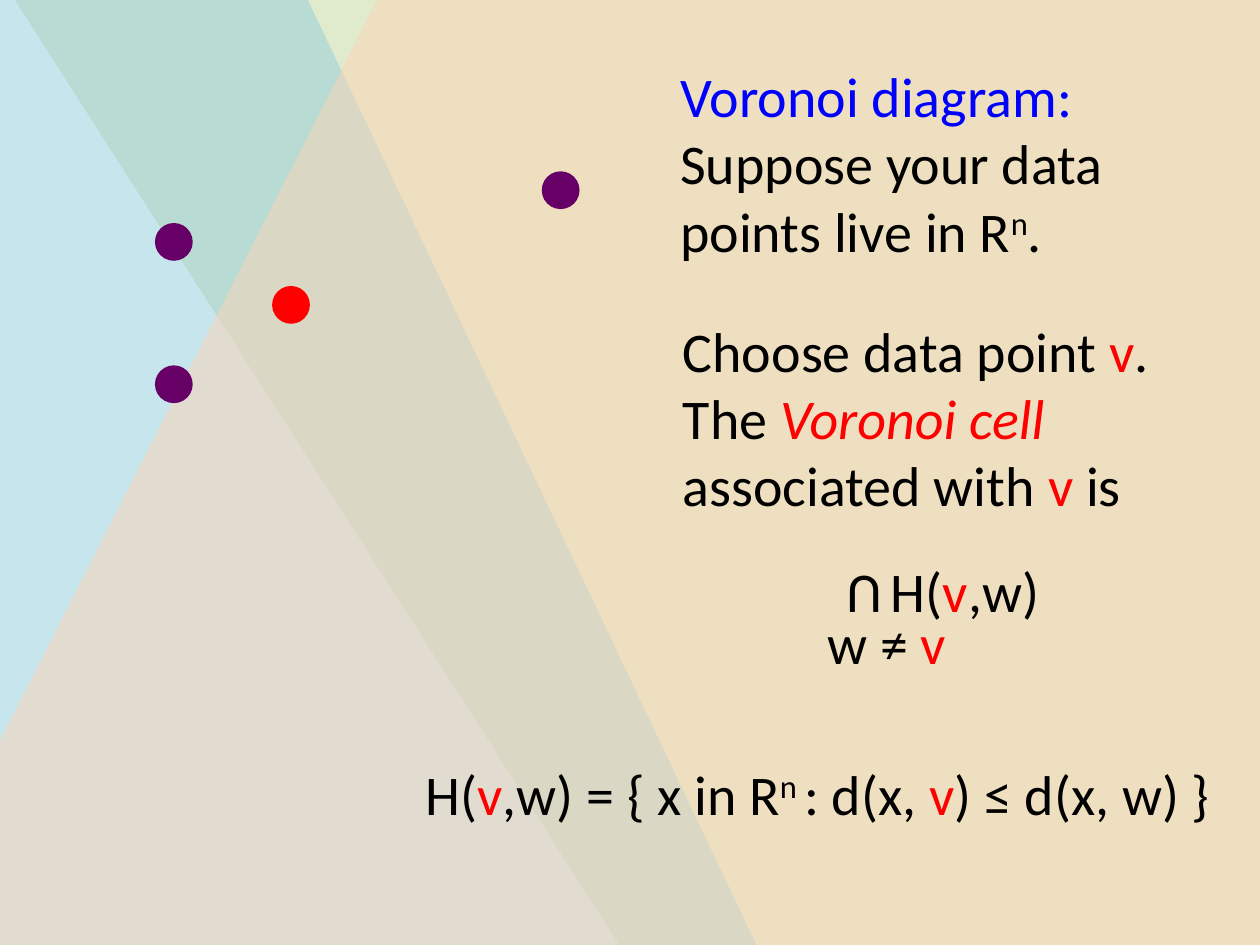
"""Build a slide that defines the Voronoi cell of a data point."""
from lxml.etree import SubElement
from pptx import Presentation
from pptx.dml.color import RGBColor
from pptx.enum.shapes import MSO_SHAPE as Shape
from pptx.enum.text import PP_ALIGN as Align
from pptx.oxml.ns import qn
from pptx.util import Inches, Pt

BLACK = RGBColor(0x00, 0x00, 0x00)
RED = RGBColor(0xFF, 0x00, 0x00)
BLUE = RGBColor(0x00, 0x00, 0xFF)
PURPLE = RGBColor(0x66, 0x00, 0x66)
GREEN_TINT = RGBColor(0xC3, 0xD6, 0x9B)
AQUA_TINT = RGBColor(0x93, 0xCD, 0xDD)
PEACH_TINT = RGBColor(0xFC, 0xD5, 0xB5)

FONT = "Calibri"
TEXT_SIZE = 32
GAP = 22
DOT = 0.3
OPACITY = 51

HALF_PLANES = [
    ((0.86, -2.07, 13.13, 9.45), 57.4, GREEN_TINT),
    ((-3.78, 1.61, 10.15, 6.05), 64.6, AQUA_TINT),
    ((0.04, -0.25, 12.17, 9.8), 297, PEACH_TINT),
]
DATA_POINTS = [
    (1.23, 2.9, PURPLE),
    (2.16, 2.27, RED),
    (1.23, 1.77, PURPLE),
    (4.3, 1.36, PURPLE),
]

V = ("v", {"color": RED})
DEFINITION = [
    [("Voronoi diagram:", {"color": BLUE})],
    ["Suppose your data points live in R", ("n", {"raised": True}), "."],
]
CELL = [
    ["Choose data point ", V, "."],
    ["The ", ("Voronoi cell ", {"color": RED, "italic": True}),
     "associated with ", V, " is"],
]
INTERSECTED = [["H(", V, ",w)"]]
CAP = [["U"]]
CONDITION = [["w ≠ ", V]]
HALF_SPACE = [
    ["H(", V, ",w) = { x in R", ("n ", {"raised": True}),
     ": d(x, ", V, ") ≤ d(x, w) }"],
]


def add_solid(page, kind, place, color):
    shape = page.shapes.add_shape(kind, *map(Inches, place))
    shape.shadow.inherit = False
    shape.fill.solid()
    shape.fill.fore_color.rgb = color
    shape.line.fill.background()
    return shape


def add_half_plane(page, place, angle, color):
    plane = add_solid(page, Shape.RECTANGLE, place, color)
    plane.rotation = angle
    tint = plane.element.spPr.find(".//" + qn("a:srgbClr"))
    SubElement(tint, qn("a:alpha")).set("val", str(OPACITY * 1000))


def add_span(para, text, color=BLACK, italic=False, raised=False):
    span = para.add_run()
    span.text = text
    span.font.color.rgb = color
    if italic:
        span.font.italic = True
    if raised:
        span._r.get_or_add_rPr().set("baseline", "30000")


def fill_para(para, pieces):
    para.font.name = FONT
    para.font.size = Pt(TEXT_SIZE)
    for piece in pieces:
        text, style = (piece, {}) if isinstance(piece, str) else piece
        add_span(para, text, **style)


def add_text(page, place, lines, wrap=True):
    box = page.shapes.add_textbox(*map(Inches, place))
    frame = box.text_frame
    frame.word_wrap = wrap
    for index, pieces in enumerate(lines):
        para = frame.add_paragraph() if index else frame.paragraphs[0]
        fill_para(para, pieces)
    return box


def main():
    deck = Presentation()
    deck.slide_width, deck.slide_height = Inches(10), Inches(7.5)
    page = deck.slides.add_slide(deck.slide_layouts[6])

    for place, angle, color in HALF_PLANES:
        add_half_plane(page, place, angle, color)
    for left, top, color in DATA_POINTS:
        add_solid(page, Shape.OVAL, (left, top, DOT, DOT), color)

    add_text(page, (5.3, 0.44, 4.19, 1.72), DEFINITION)
    cell = add_text(page, (5.32, 2.46, 4.68, 2.56), CELL + INTERSECTED)
    formula = cell.text_frame.paragraphs[-1]
    formula.alignment = Align.CENTER
    formula.space_before = Pt(GAP)
    add_text(page, (6.76, 4.43, 0.34, 0.64), CAP).rotation = 180
    add_text(page, (6.47, 4.78, 1.4, 0.64), CONDITION)
    add_text(page, (3.28, 5.98, 6.54, 0.64), HALF_SPACE, wrap=False)

    deck.save("out.pptx")


if __name__ == "__main__":
    main()
